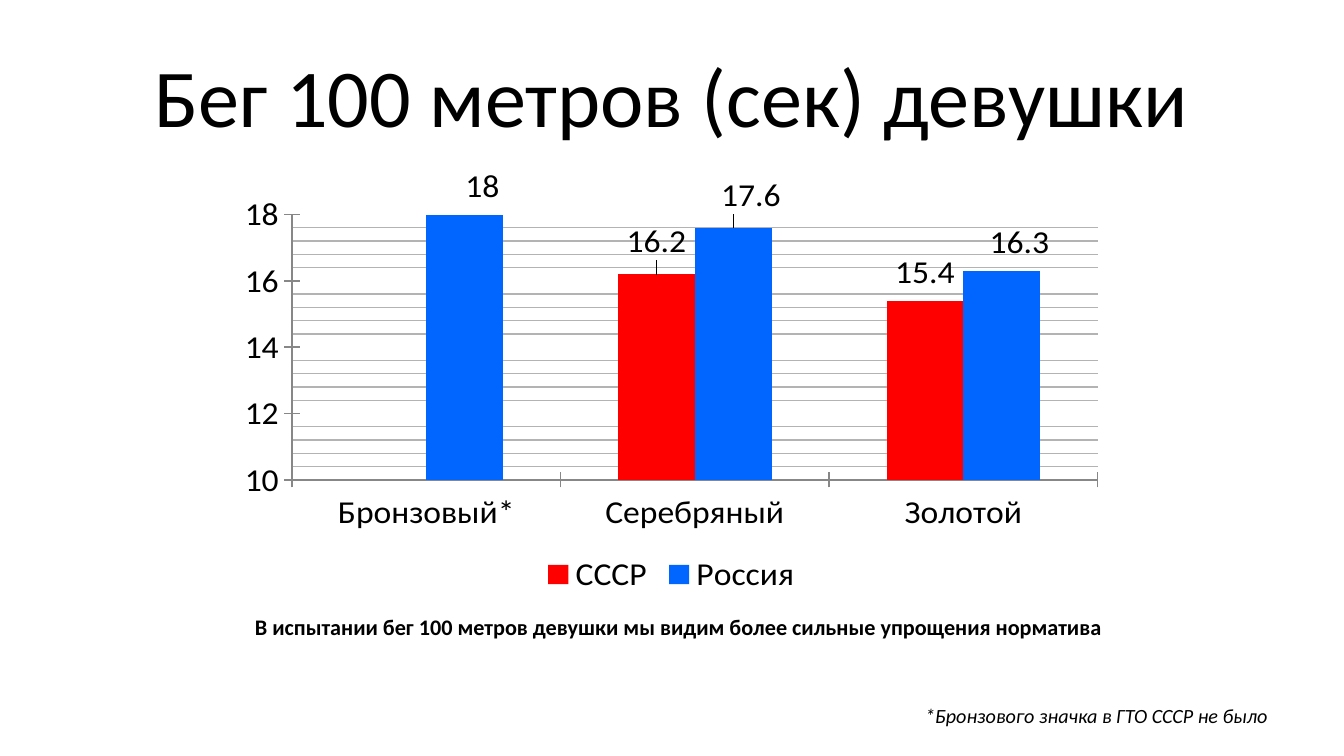
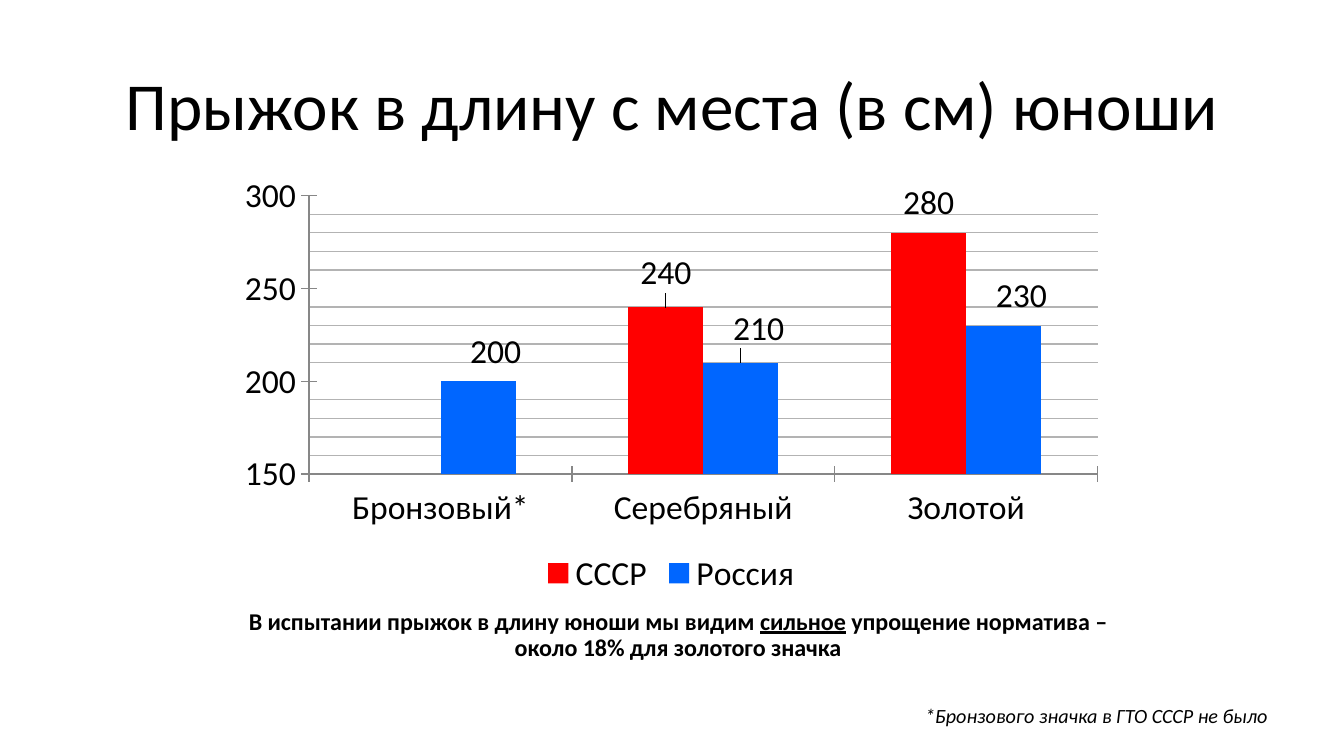
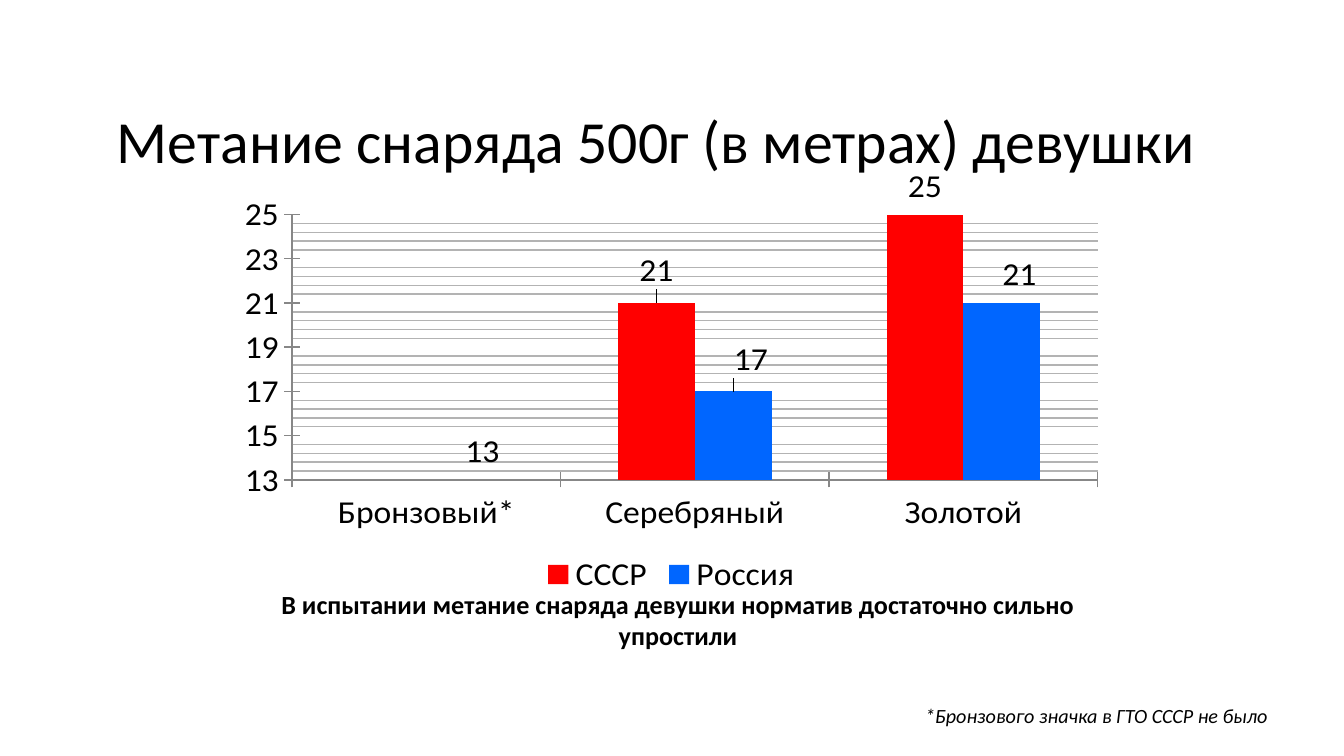
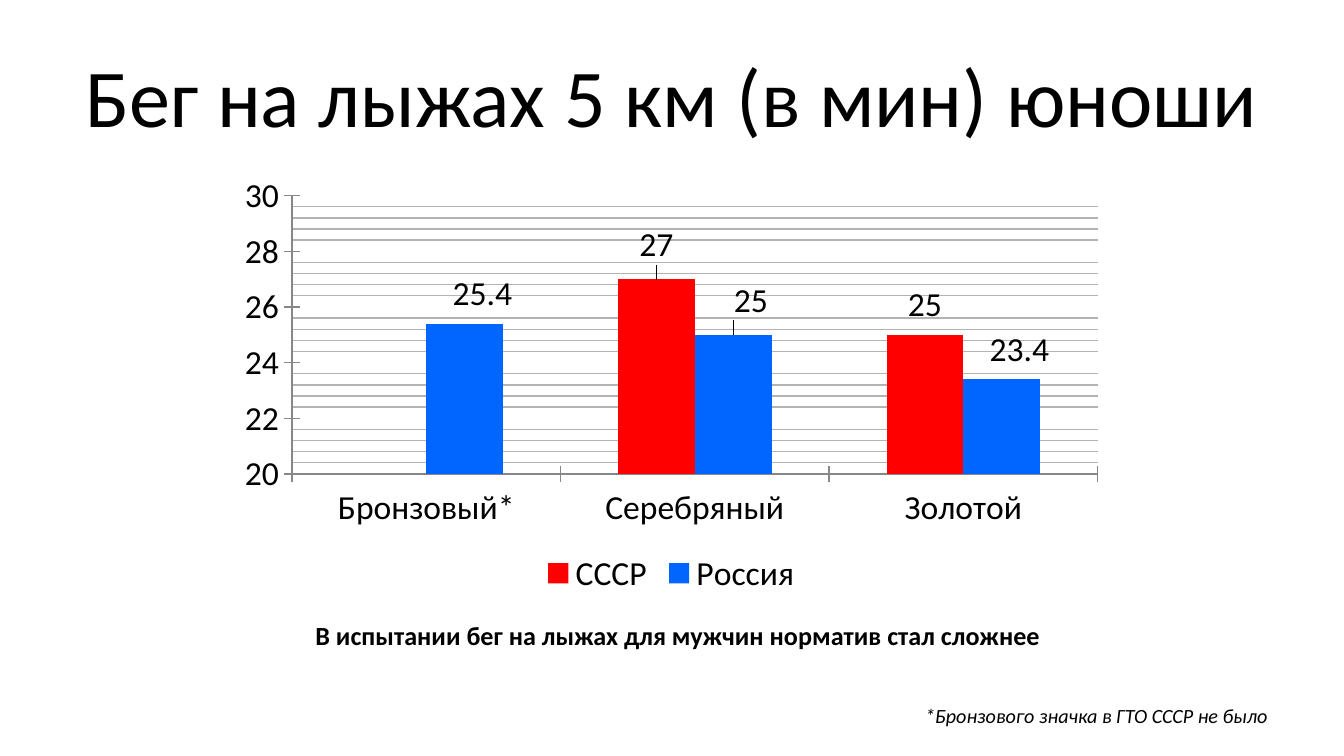
from pptx import Presentation
from pptx.chart.data import CategoryChartData
from pptx.dml.color import RGBColor
from pptx.enum.chart import XL_CHART_TYPE as ChartType
from pptx.enum.chart import XL_LABEL_POSITION as LabelPos
from pptx.enum.chart import XL_LEGEND_POSITION as LegendPos
from pptx.enum.chart import XL_TICK_MARK as Tick
from pptx.enum.text import MSO_ANCHOR as Anchor
from pptx.enum.text import PP_ALIGN as Align
from pptx.oxml import parse_xml
from pptx.oxml.ns import nsdecls
from pptx.util import Cm, Pt

BLACK = RGBColor(0x00, 0x00, 0x00)
RED = RGBColor(0xFF, 0x00, 0x00)
BLUE = RGBColor(0x00, 0x66, 0xFF)
GRID = RGBColor(0xB3, 0xB3, 0xB3)
AXIS = RGBColor(0x87, 0x87, 0x87)
FONT = "Calibri"

BADGES = ("Бронзовый*", "Серебряный", "Золотой")
FOOTNOTE = "*Бронзового значка в ГТО СССР не было"
TITLE_BOX = (1.27, 0.58, 22.86, 2.39)
LOW_TITLE_BOX = (1.09, 0.94, 22.63, 2.62)
CHART_BOX = (4.29, 3.15, 16.79, 8.2)
FOOTNOTE_BOX = (17.09, 12.75, 7.26, 1.19)
SHORT_CAPTION_BOX = (3.91, 11.15, 17.81, 1.19)
CAPTION_BOX = (3.91, 11.15, 17.81, 1.6)
HIGH_CAPTION_BOX = (3.91, 10.95, 17.81, 1.6)
SERIES = (
    ("СССР", RED, (None, (0, -0.02), (0, -0.01))),
    ("Россия", BLUE, ((0.02, -0.01), (0.02, -0.02), (0.02, -0.01))),
)

SLIDES = (
    dict(
        title=("Бег 100 метров (сек) девушки", TITLE_BOX, 44),
        scale=(10, 18, 2),
        values=((None, 16.2, 15.4), (18, 17.6, 16.3)),
        caption=("В испытании бег 100 метров девушки мы видим более сильные "
                 "упрощения норматива", SHORT_CAPTION_BOX, 11.9, 0.9),
    ),
    dict(
        title=("Прыжок в длину с места (в см) юноши", TITLE_BOX, 36),
        scale=(150, 300, 50),
        values=((None, 240, 280), (200, 210, 230)),
        caption=("В испытании прыжок в длину юноши мы видим _сильное_ упрощение "
                 "норматива – около 18% для золотого значка", CAPTION_BOX, 12.9, 0.9),
    ),
    dict(
        title=("Метание снаряда 500г (в метрах) девушки", LOW_TITLE_BOX, 32),
        scale=(13, 25, 2),
        values=((None, 21, 25), (13, 17, 21)),
        caption=("В испытании метание снаряда девушки норматив достаточно сильно "
                 "упростили", HIGH_CAPTION_BOX, 14),
    ),
    dict(
        title=("Бег на лыжах 5 км (в мин) юноши", TITLE_BOX, 44),
        scale=(20, 30, 2),
        values=((None, 27, 25), (25.4, 25, 23.4)),
        caption=("В испытании бег на лыжах для мужчин норматив стал сложнее",
                 HIGH_CAPTION_BOX, 14),
    ),
)


class Deck:
    """Holds the shared style and the slide being filled."""

    def __init__(self):
        self.prs = Presentation()
        self.prs.slide_width, self.prs.slide_height = Cm(25.4), Cm(14.29)
        self.s = None

    def slide(self):
        """Start a blank slide."""
        self.s = self.prs.slides.add_slide(self.prs.slide_layouts[6])

    def text(self, text, box, size, spacing=1.0, bold=False, italic=False):
        """Add centred text; words between underscores are underlined."""
        tf = self.s.shapes.add_textbox(*map(Cm, box)).text_frame
        tf.word_wrap = True
        tf.vertical_anchor = Anchor.BOTTOM
        tf.margin_left = tf.margin_right = Cm(0.25)
        tf.margin_top = tf.margin_bottom = Cm(0.25)
        p = tf.paragraphs[0]
        p.alignment, p.line_spacing = Align.CENTER, spacing
        for i, part in enumerate(text.split("_")):
            r = p.add_run()
            r.text = part
            self.font(r.font, size)
            r.font.bold, r.font.italic = bold, italic
            r.font.underline = i % 2 == 1

    def font(self, font, size):
        """Apply the common typeface and colour."""
        font.name, font.size = FONT, Pt(size)
        font.color.rgb = BLACK

    def chart(self, values, low, high, step):
        """Add the column chart comparing the two sets of norms."""
        data = CategoryChartData()
        data.categories = BADGES
        for (name, _, _), vals in zip(SERIES, values):
            data.add_series(name, vals)
        chart = self.s.shapes.add_chart(
            ChartType.COLUMN_CLUSTERED, *map(Cm, CHART_BOX), data).chart
        self.font(chart.font, 18)
        chart.has_title = False
        chart.has_legend = True
        chart.legend.position = LegendPos.BOTTOM
        chart.legend.include_in_layout = False
        axis = chart.value_axis
        axis.minimum_scale, axis.maximum_scale = low, high
        axis.major_unit, axis.minor_unit = step, step / 5
        axis.has_major_gridlines, axis.has_minor_gridlines = False, True
        self.gridlines(axis)
        for ax in (axis, chart.category_axis):
            ax.major_tick_mark = Tick.CROSS
            ax.format.line.color.rgb, ax.format.line.width = AXIS, Pt(0.75)
        plot = chart.plots[0]
        plot.gap_width, plot.overlap, plot.vary_by_categories = 150, 0, False
        for series, (_, color, shifts) in zip(plot.series, SERIES):
            series.format.fill.solid()
            series.format.fill.fore_color.rgb = color
            self.labels(series, shifts)

    def gridlines(self, axis):
        """Draw the minor gridlines thin and grey."""
        axis._element.xpath("c:minorGridlines")[0].append(parse_xml(
            f'<c:spPr {nsdecls("c", "a")}><a:ln w="{Pt(0.75)}"><a:solidFill>'
            f'<a:srgbClr val="{GRID}"/></a:solidFill></a:ln></c:spPr>'))

    def labels(self, series, shifts):
        """Show values above the columns, moved by fractions of the chart."""
        labels = series.data_labels
        labels.show_value = True
        labels.number_format, labels.number_format_is_linked = "General", False
        labels.position = LabelPos.OUTSIDE_END
        for i, shift in enumerate(shifts):
            if shift is None:
                continue
            series.points[i].data_label.position = LabelPos.OUTSIDE_END
            idx = series._element.xpath(f"c:dLbls/c:dLbl/c:idx[@val='{i}']")[0]
            idx.addnext(parse_xml(
                f'<c:layout {nsdecls("c")}><c:manualLayout><c:x val="{shift[0]}"/>'
                f'<c:y val="{shift[1]}"/></c:manualLayout></c:layout>'))


def main():
    """Build the four slides."""
    deck = Deck()
    for page in SLIDES:
        deck.slide()
        deck.text(*page["title"])
        deck.chart(page["values"], *page["scale"])
        deck.text(FOOTNOTE, FOOTNOTE_BOX, 10.8, 0.8, italic=True)
        deck.text(*page["caption"], bold=True)
    deck.prs.save("out.pptx")


if __name__ == "__main__":
    main()
